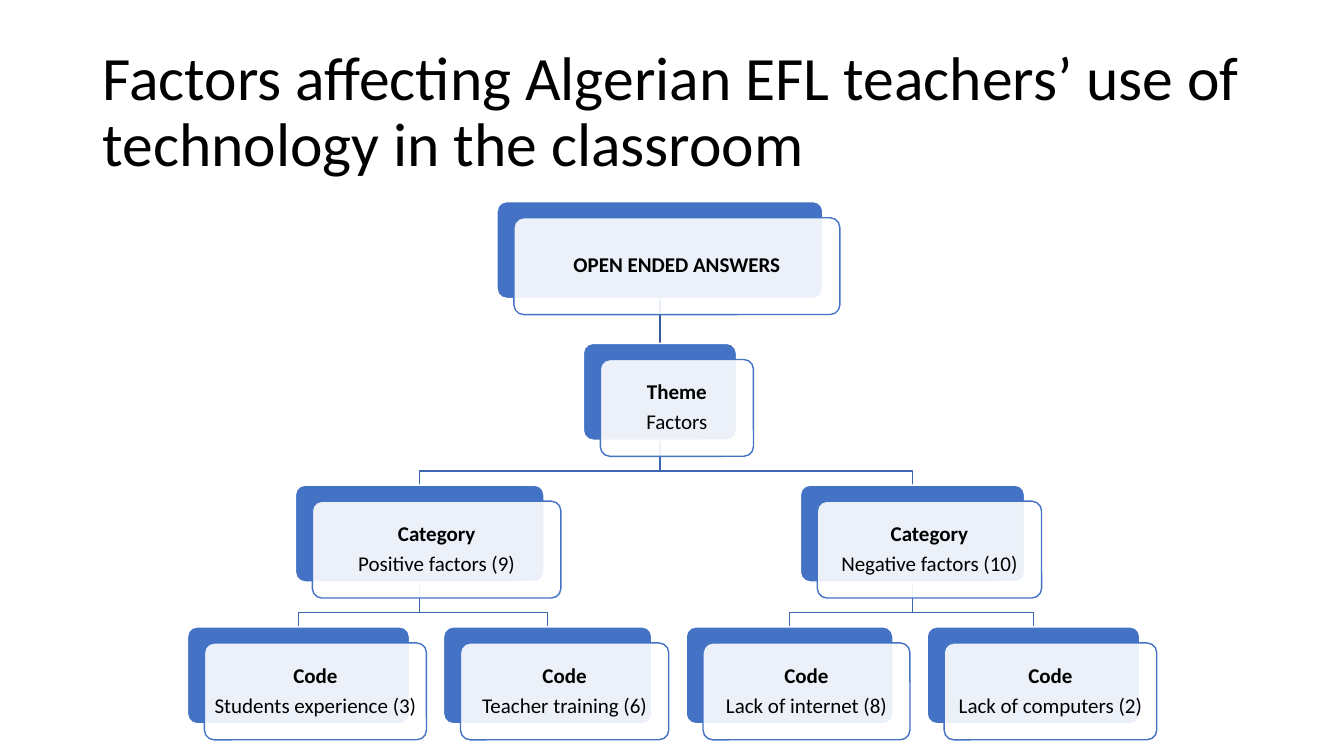
from pptx import Presentation
from pptx.dml.color import RGBColor
from pptx.enum.shapes import MSO_CONNECTOR as Connector, MSO_SHAPE as Shape
from pptx.enum.text import MSO_ANCHOR as Anchor, MSO_AUTO_SIZE as AutoSize, PP_ALIGN as Align
from pptx.oxml.ns import qn
from pptx.util import Pt
from lxml.etree import SubElement

# Content
TITLE = "Factors affecting Algerian EFL teachers’ use of technology in the classroom"
# key: (parent, level, centre x, width, heading, detail)
NODES = {
    "answers": (None, 0, 471.4, 232.8, "OPEN ENDED ANSWERS", None),
    "theme": ("answers", 1, 471.4, 109.4, "Theme", "Factors"),
    "positive": ("theme", 2, 299.8, 177.6, "Category", "Positive factors (9)"),
    "experience": ("positive", 3, 213.2, 158.6, "Code", "Students experience (3)"),
    "training": ("positive", 3, 391.2, 148.8, "Code", "Teacher training (6)"),
    "negative": ("theme", 2, 651.8, 160.2, "Category", "Negative factors (10)"),
    "internet": ("negative", 3, 564, 147.8, "Code", "Lack of internet (8)"),
    "computers": ("negative", 3, 738.2, 151.9, "Code", "Lack of computers (2)"),
}
COLORS = {"text": "000000", "card": "4472C4", "white": "FFFFFF",
          "branch": "3E67B2", "trunk": "365B9D"}
FONT = "Calibri"

# Layout
TOP, LEVEL_STEP, CARD_HEIGHT = 144, 101.25, 69.2
SHIFT_X, SHIFT_Y = 12.1, 11.5
BEND = 21.9


def rgb(name):
    return RGBColor.from_string(COLORS[name])


def level_top(level):
    return TOP + level * LEVEL_STEP


def write(frame, lines, size, align, inset, space_after=0):
    """Lines are (text, bold) pairs, one paragraph each."""
    frame.word_wrap = True
    frame.auto_size = AutoSize.NONE
    frame.vertical_anchor = Anchor.MIDDLE
    frame.margin_left = frame.margin_right = Pt(inset[0])
    frame.margin_top = frame.margin_bottom = Pt(inset[1])
    for index, (text, bold) in enumerate(lines):
        paragraph = frame.add_paragraph() if index else frame.paragraphs[0]
        paragraph.alignment = align
        paragraph.line_spacing = 0.9
        paragraph.space_before = Pt(0)
        paragraph.space_after = Pt(space_after)
        run = paragraph.add_run()
        run.text = text
        run.font.name = FONT
        run.font.size = Pt(size)
        run.font.bold = bold
        run.font.color.rgb = rgb("text")


def add_card(left, top, width, fill, line):
    card = slide.shapes.add_shape(Shape.ROUNDED_RECTANGLE, Pt(left), Pt(top),
                                  Pt(width), Pt(CARD_HEIGHT))
    card.adjustments[0] = 0.1
    card.shadow.inherit = False
    card.fill.solid()
    card.fill.fore_color.rgb = rgb(fill)
    card.line.color.rgb = rgb(line)
    card.line.width = Pt(1)
    return card


def add_branch(parent, child):
    _, level, start_x, *_ = NODES[parent]
    end_x = NODES[child][2]
    start_y = level_top(level) + CARD_HEIGHT
    builder = slide.shapes.build_freeform(Pt(start_x), Pt(start_y))
    corners = [(start_x, start_y + BEND), (end_x, start_y + BEND),
               (end_x, level_top(level + 1))]
    builder.add_line_segments([(Pt(x), Pt(y)) for x, y in corners], close=False)
    branch = builder.convert_to_shape()
    branch.shadow.inherit = False
    branch.fill.background()
    branch.line.color.rgb = rgb("branch")
    branch.line.width = Pt(1)


def add_node(key):
    _, level, centre, width, heading, detail = NODES[key]
    left, top = centre - width / 2, level_top(level)
    back = add_card(left, top, width, "card", "white")
    front = add_card(left + SHIFT_X, top + SHIFT_Y, width, "white", "card")
    fill_color = front.fill._xPr.find(qn("a:solidFill"))[0]
    SubElement(fill_color, qn("a:alpha"), val="90000")
    lines = [(heading, True)] + ([(detail, False)] if detail else [])
    write(front.text_frame, lines, size=15, align=Align.CENTER,
          inset=(4.1, 4.1), space_after=5.25)
    return back


prs = Presentation()
prs.slide_width, prs.slide_height = Pt(960), Pt(540)
slide = prs.slides.add_slide(prs.slide_layouts[5])

# Title
title = slide.shapes.title
title.left, title.top, title.width, title.height = Pt(66), Pt(28.8), Pt(828), Pt(104.4)
write(title.text_frame, [(TITLE, False)], size=44, align=Align.LEFT, inset=(7.2, 3.6))

# Lines, behind the cards
for node, (parent, *_) in NODES.items():
    if parent and parent != "answers":
        add_branch(parent, node)

trunk_x = Pt(NODES["answers"][2])
trunk = slide.shapes.add_connector(Connector.STRAIGHT, trunk_x, Pt(TOP + CARD_HEIGHT),
                                   trunk_x, Pt(level_top(1)))
trunk.line.color.rgb = rgb("trunk")
trunk.line.width = Pt(1)
SubElement(trunk._element.spPr, qn("a:effectLst"))

# Cards
cards = {node: add_node(node) for node in NODES}
trunk.begin_connect(cards["answers"], 2)
trunk.end_connect(cards["theme"], 0)

prs.save("out.pptx")
